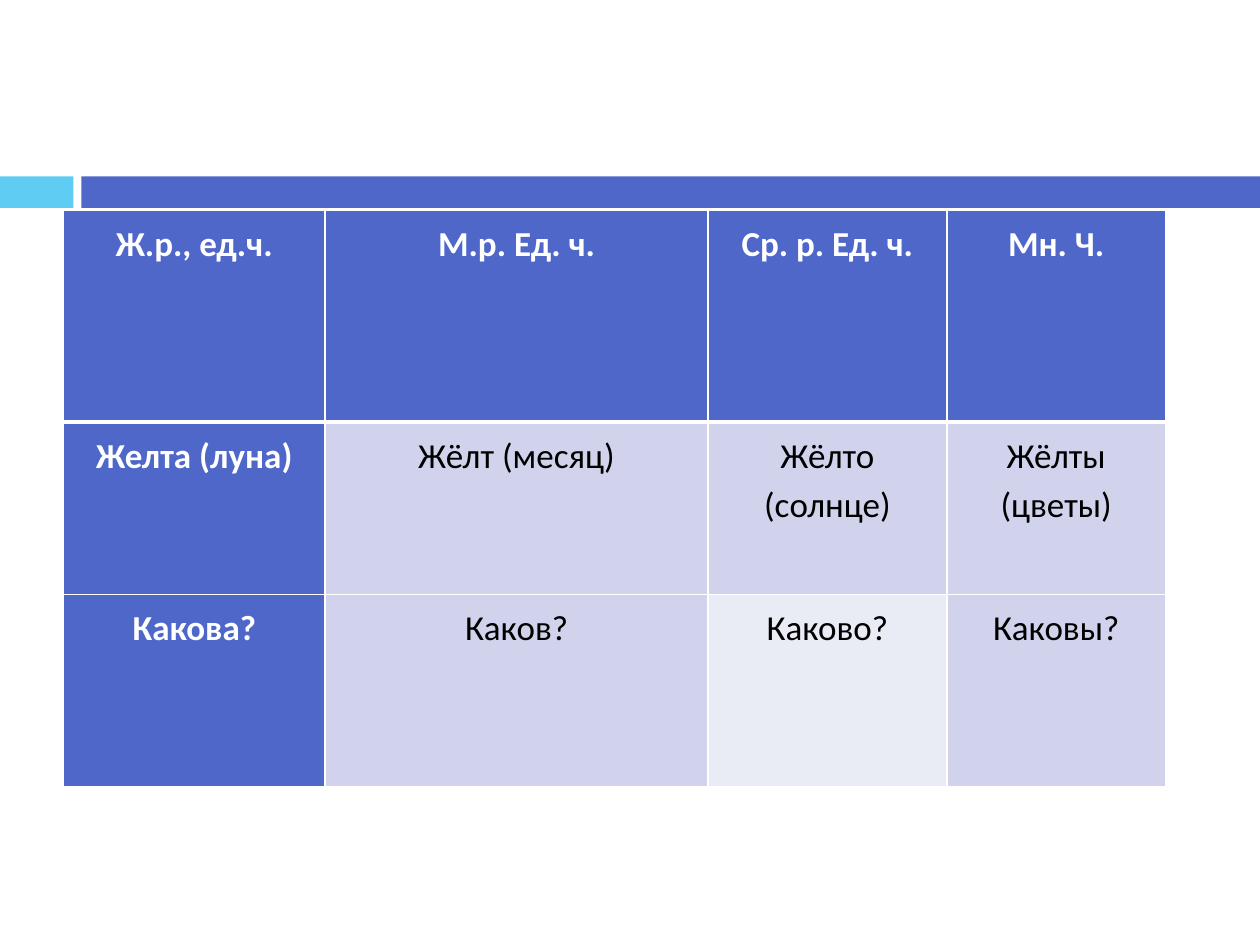
from lxml.etree import SubElement
from pptx import Presentation
from pptx.dml.color import RGBColor as RGB
from pptx.enum.shapes import MSO_SHAPE as Shape
from pptx.enum.text import PP_ALIGN as Align
from pptx.oxml.ns import qn
from pptx.util import Pt

# Content
FORMS = [
    ["Ж.р., ед.ч.", "М.р. Ед. ч.", "Ср. р. Ед. ч.", "Мн. Ч."],
    ["Желта (луна)", "Жёлт (месяц)", "Жёлто (солнце)", "Жёлты (цветы)"],
    ["Какова?", "Каков?", "Каково?", "Каковы?"],
]
COLORS = {"cyan": "5ECCF3", "blue": "4E67C8", "band": "D0D3EB",
          "pale": "E9EBF5", "white": "FFFFFF", "black": "000000"}
PALE_CELL = (2, 2)

# Layout in points
WIDTH, HEIGHT = 720, 540
BAR_TOP, BAR_HEIGHT = 100.8, 18
BARS = [(0, 42, "cyan"), (46.5, 673.5, "blue")]  # left, width, color
TABLE_LEFT, TABLE_TOP = 36.3, 120.25
COLUMN_WIDTHS = [149.5, 218.75, 136.5, 125]
ROW_HEIGHTS = [121, 98.5, 110]
THIN, THICK = 1, 3


def color(name):
    return RGB.from_string(COLORS[name])


def paint(target, name):
    target.fill.solid()
    target.fill.fore_color.rgb = color(name)


def add_borders(cell, widths):
    """Draw white cell borders; widths maps side letters to points."""
    properties = cell._tc.get_or_add_tcPr()
    for side, width in widths.items():
        line = SubElement(properties, qn(f"a:ln{side}"), w=str(Pt(width)))
        fill = SubElement(line, qn("a:solidFill"))
        SubElement(fill, qn("a:srgbClr"), val=COLORS["white"])


def fill_cell(cell, wording, row, column):
    heading = row == 0 or column == 0
    # Borders come before the fill in the cell properties
    add_borders(cell, {"L": THIN, "R": THIN,
                       "T": THICK if row == 1 else THIN,
                       "B": THICK if row == 0 else THIN})
    pale = (row, column) == PALE_CELL
    paint(cell, "blue" if heading else "pale" if pale else "band")
    paragraph = cell.text_frame.paragraphs[0]
    paragraph.alignment, paragraph.line_spacing = Align.CENTER, 1.15
    run = paragraph.add_run()
    run.text = wording
    style = {"name": "Calibri", "size": Pt(20), "bold": heading}
    for key, value in style.items():
        setattr(run.font, key, value)
    run.font.color.rgb = color("white" if heading else "black")


deck = Presentation()
deck.slide_width, deck.slide_height = Pt(WIDTH), Pt(HEIGHT)
slide = deck.slides.add_slide(deck.slide_layouts[6])

# Bars above the table
for left, width, name in BARS:
    bar = slide.shapes.add_shape(Shape.RECTANGLE, Pt(left), Pt(BAR_TOP),
                                 Pt(width), Pt(BAR_HEIGHT))
    bar.shadow.inherit = False
    paint(bar, name)
    bar.line.fill.background()

# Table of short adjective forms
table = slide.shapes.add_table(
    len(ROW_HEIGHTS), len(COLUMN_WIDTHS), Pt(TABLE_LEFT), Pt(TABLE_TOP),
    Pt(sum(COLUMN_WIDTHS)), Pt(sum(ROW_HEIGHTS))).table
table.first_col = True
for column, width in zip(table.columns, COLUMN_WIDTHS):
    column.width = Pt(width)
for row, height in zip(table.rows, ROW_HEIGHTS):
    row.height = Pt(height)
for r, forms in enumerate(FORMS):
    for c, wording in enumerate(forms):
        fill_cell(table.cell(r, c), wording, r, c)

deck.save("out.pptx")
